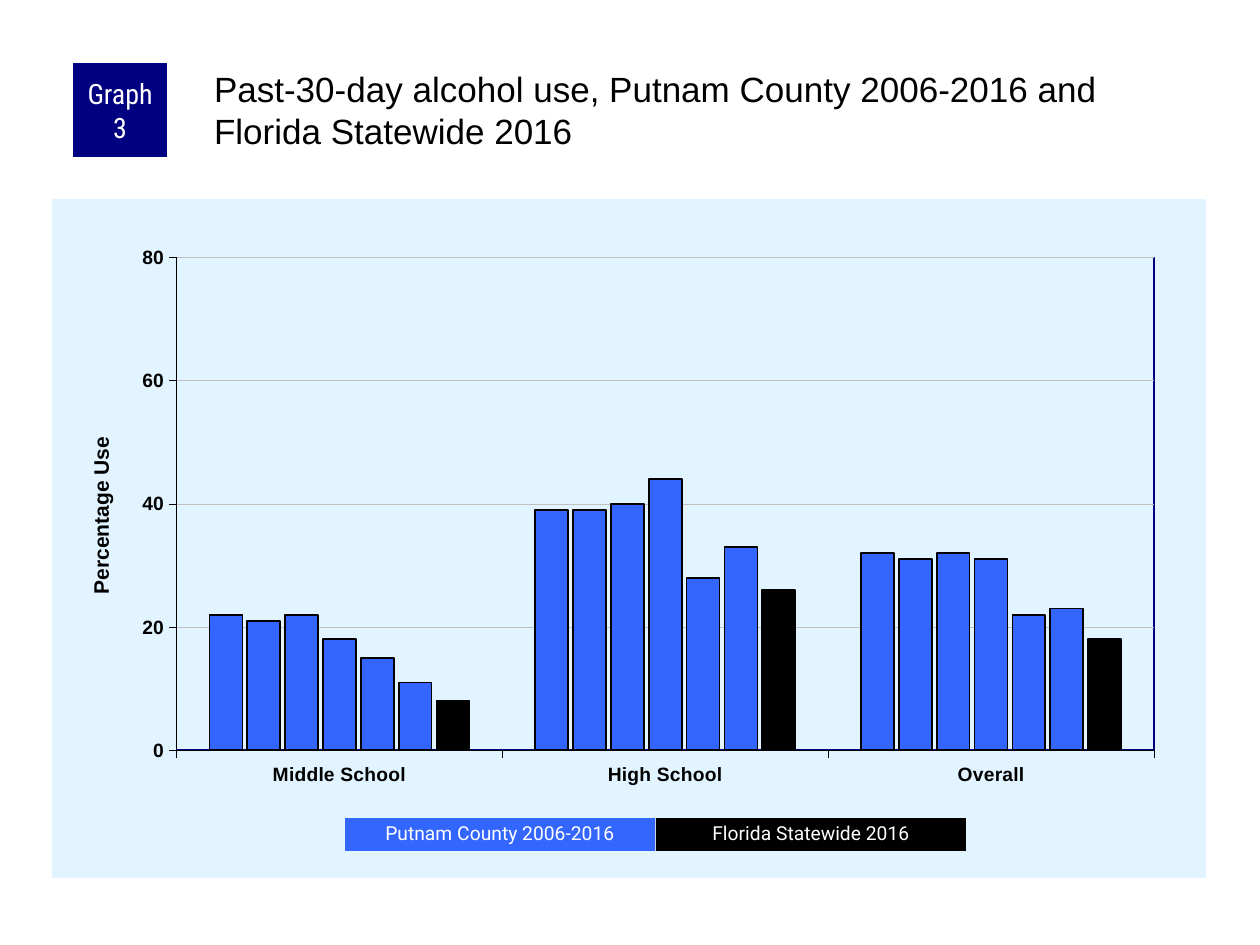
from lxml.etree import fromstring
from pptx import Presentation
from pptx.chart.data import CategoryChartData
from pptx.dml.color import RGBColor
from pptx.enum.chart import XL_CHART_TYPE as ChartType, XL_TICK_MARK as Tick
from pptx.enum.shapes import MSO_SHAPE as Shape
from pptx.enum.text import MSO_ANCHOR as Anchor, PP_ALIGN as Align
from pptx.oxml import parse_xml
from pptx.oxml.ns import nsdecls
from pptx.util import Emu, Pt

PX = 914400 / 126
BLUE, BLACK, NAVY, WHITE = "3366FF", "000000", "000080", "FFFFFF"


def px(*lengths):
    return [Emu(round(n * PX)) for n in lengths]


def color(hex_string):
    return RGBColor.from_string(hex_string)


prs = Presentation()
prs.slide_width, prs.slide_height = px(1260, 945)
slide = prs.slides.add_slide(prs.slide_layouts[5])

# Title
title = slide.shapes.title
title.left, title.top, title.width, title.height = px(210, 63, 998, 105)
heading = title.text_frame
heading.text = "Past-30-day alcohol use, Putnam County 2006-2016 and Florida Statewide 2016"
heading.word_wrap = True
heading.vertical_anchor = Anchor.TOP
heading.margin_left, heading.margin_top, heading.margin_right, heading.margin_bottom = px(4, 4, 0, 0)
heading.paragraphs[0].alignment = Align.LEFT
heading_font = heading.paragraphs[0].runs[0].font
heading_font.name, heading_font.size = "Arial", Pt(20)
heading_font.color.rgb = color(BLACK)

# Chart: six county years and one statewide year per school level
alcohol_use = [
    (22, 39, 32), (21, 39, 31), (22, 40, 32), (18, 44, 31),
    (15, 28, 22), (11, 33, 23), (8, 26, 18),
]
data = CategoryChartData()
data.categories = ["Middle School", "High School", "Overall"]
for number, values in enumerate(alcohol_use, 1):
    data.add_series(f"Series {number}", values)
chart = slide.shapes.add_chart(
    ChartType.COLUMN_CLUSTERED, *px(52, 199, 1154, 679), data).chart
chart.has_legend = False
chart.has_title = False
chart.font.name, chart.font.size = "Arial", Pt(8)
chart.font.color.rgb = color(BLACK)

bars = chart.plots[0]
bars.vary_by_categories = False
bars.gap_width, bars.overlap = 200, -15
for number, series in enumerate(bars.series, 1):
    series.format.fill.solid()
    series.format.fill.fore_color.rgb = color(BLACK if number == len(alcohol_use) else BLUE)
    series.format.line.color.rgb = color(BLACK)
    series.format.line.width = Pt(1)

# Axes
percent_axis = chart.value_axis
for axis in (chart.category_axis, percent_axis):
    axis.major_tick_mark, axis.minor_tick_mark = Tick.OUTSIDE, Tick.NONE
    axis.format.line.color.rgb = color(BLACK)
    axis.format.line.width = Pt(0.25)
    labels = axis.tick_labels.font
    labels.name, labels.size, labels.bold = "Arial", Pt(11), True
    labels.color.rgb = color(BLACK)
percent_axis.minimum_scale, percent_axis.maximum_scale = 0, 80
percent_axis.major_unit = 20
percent_axis.major_gridlines.format.line.color.rgb = color("C0C0C0")
percent_axis.major_gridlines.format.line.width = Pt(0.25)
axis_title = percent_axis.axis_title.text_frame
axis_title.text = "Percentage Use"
axis_title_font = axis_title.paragraphs[0].runs[0].font
axis_title_font.name, axis_title_font.size, axis_title_font.bold = "Arial", Pt(12), True
axis_title_font.color.rgb = color(BLACK)

# Plot position, plot frame and chart background
chart_space = chart.element
plot_area = chart_space.chart.plotArea
for layout in plot_area.findall("{*}layout"):
    plot_area.remove(layout)
plot_area.insert(0, parse_xml(
    f'<c:layout {nsdecls("c")}><c:manualLayout><c:layoutTarget val="inner"/>'
    '<c:xMode val="edge"/><c:yMode val="edge"/><c:x val="0.108"/><c:y val="0.086"/>'
    '<c:w val="0.847"/><c:h val="0.726"/></c:manualLayout></c:layout>'))
plot_area.append(parse_xml(
    f'<c:spPr {nsdecls("c", "a")}><a:noFill/><a:ln w="12700"><a:solidFill>'
    f'<a:srgbClr val="{NAVY}"/></a:solidFill></a:ln></c:spPr>'))
chart_space.chart.addnext(parse_xml(
    f'<c:spPr {nsdecls("c", "a")}><a:solidFill><a:srgbClr val="E1F4FF"/></a:solidFill>'
    '<a:ln><a:noFill/></a:ln></c:spPr>'))

# Graph number and the two legend bars
boxes = [
    ("Graph 3", (73, 63, 94, 94), NAVY, "Roboto Condensed", 16, 6, 1.0),
    ("Putnam County 2006-2016", (345, 818, 310, 33), BLUE, "Roboto", 11, 12, 0.9),
    ("Florida Statewide 2016", (656, 818, 310, 33), BLACK, "Roboto", 11, 12, 0.9),
]
for text, place, fill, font_name, size, side_margin, spacing in boxes:
    box = slide.shapes.add_shape(Shape.RECTANGLE, *px(*place))
    box.shadow.inherit = False
    box.fill.solid()
    box.fill.fore_color.rgb = color(fill)
    box.line.fill.background()
    frame = box.text_frame
    frame.text = text
    frame.word_wrap = True
    frame.vertical_anchor = Anchor.MIDDLE
    frame.margin_left, frame.margin_right = px(side_margin, side_margin)
    frame.margin_top = frame.margin_bottom = 0
    paragraph = frame.paragraphs[0]
    paragraph.alignment, paragraph.line_spacing = Align.CENTER, spacing
    font = paragraph.runs[0].font
    font.name, font.size = font_name, Pt(size)
    font.color.rgb = color(WHITE)

prs.save("out.pptx")
